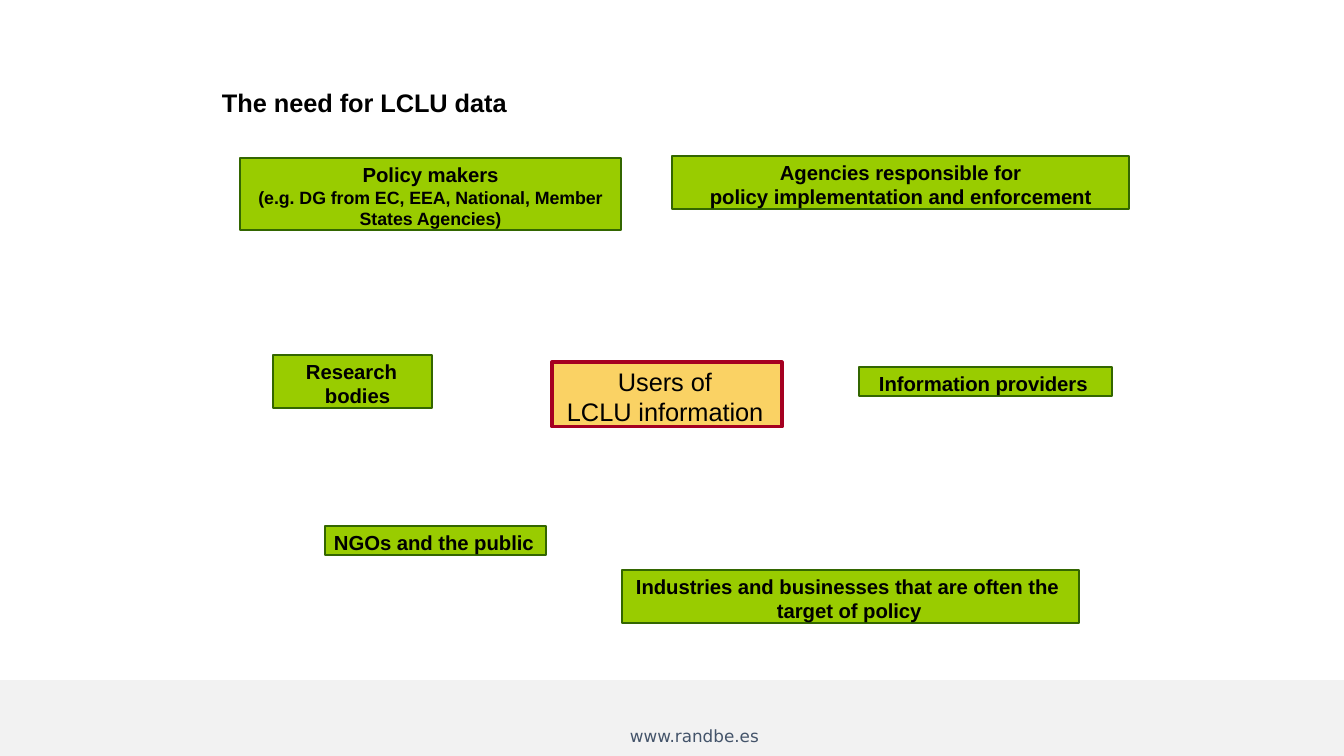
from dataclasses import dataclass

from pptx import Presentation
from pptx.dml.color import RGBColor as RGB
from pptx.enum.shapes import MSO_SHAPE as SHAPE
from pptx.enum.text import MSO_ANCHOR as ANCHOR, PP_ALIGN as ALIGN
from pptx.util import Emu, Pt

EMU_PER_PX = 12192000 / 1344


@dataclass(frozen=True)
class Theme:
    """Colours, fonts and type sizes of the slide."""
    font: str = "Arial"
    footer_font: str = "DejaVu Sans"
    text: str = "000000"
    footer_text: str = "44546A"
    band: str = "F2F2F2"
    user_fill: str = "99CC00"
    user_line: str = "336600"
    hub_fill: str = "FAD264"
    hub_line: str = "A50021"
    large: float = 18.1
    label: float = 14.5
    detail: float = 12.7
    footer: float = 12


T = Theme()


def px(n):
    """Turn pixels into EMU."""
    return Emu(round(n * EMU_PER_PX))


def add_text(tf, text, new=False, size=T.label, bold=True, font=T.font, color=T.text,
             align=ALIGN.LEFT, before=0, leading=None, left=0, first=0, tight=-5):
    """Write one formatted paragraph into a text frame."""
    p = tf.add_paragraph() if new else tf.paragraphs[0]
    p.alignment = align
    p.space_before = Pt(before)
    if leading:
        p.line_spacing = Pt(leading)
    pPr = p._p.get_or_add_pPr()
    pPr.set("marL", str(px(left)))
    pPr.set("indent", str(px(first)))
    for i, line in enumerate(text.split("\n")):
        if i:
            p.add_line_break()
        r = p.add_run()
        r.text = line
        r.font.size, r.font.bold, r.font.name = Pt(size), bold, font
        r.font.color.rgb = RGB.from_string(color)
        r._r.get_or_add_rPr().set("spc", str(tight))


def set_frame(tf, anchor=ANCHOR.TOP, side=0, top=0):
    """Set wrapping, anchor and insets of a text frame and return it."""
    tf.word_wrap = True
    tf.vertical_anchor = anchor
    tf.margin_left = tf.margin_right = px(side)
    tf.margin_top, tf.margin_bottom = px(top), 0
    return tf


def add_box(slide, at, fill=T.user_fill, line=T.user_line, weight=1.5):
    """Draw an outlined rectangle and return its text frame."""
    sp = slide.shapes.add_shape(SHAPE.RECTANGLE, *map(px, at))
    sp.shadow.inherit = False
    sp.fill.solid()
    sp.fill.fore_color.rgb = RGB.from_string(fill)
    sp.line.color.rgb = RGB.from_string(line)
    sp.line.width = Pt(weight)
    return set_frame(sp.text_frame, top=4)


def add_label(slide, at, **frame):
    """Add a text box and return its text frame."""
    return set_frame(slide.shapes.add_textbox(*map(px, at)).text_frame, **frame)


def main():
    """Build the slide and save it."""
    prs = Presentation()
    prs.slide_width, prs.slide_height = px(1344), px(756)
    slide = prs.slides.add_slide(prs.slide_layouts[6])

    add_box(slide, (0, 681, 1344, 75), T.band, T.band, 1)
    add_text(add_label(slide, (620, 721, 173, 30), anchor=ANCHOR.MIDDLE, side=10),
             "www.randbe.es", size=T.footer, bold=False, font=T.footer_font,
             color=T.footer_text, tight=0)

    hub = add_box(slide, (552, 362, 230, 65), T.hub_fill, T.hub_line, 2.25)
    add_text(hub, "Users of\nLCLU information", size=T.large, bold=False, left=15, first=51)

    policy = add_box(slide, (240, 158, 381, 72))
    add_text(policy, "Policy makers", align=ALIGN.CENTER, leading=17.4)
    add_text(policy, "(e.g. DG from EC, EEA, National, Member\nStates Agencies)", new=True,
             size=T.detail, align=ALIGN.CENTER, leading=15.2, before=0.5)

    agencies = add_box(slide, (672, 156, 457, 53))
    add_text(agencies, "Agencies responsible for", align=ALIGN.CENTER)
    add_text(agencies, "policy implementation and enforcement", new=True,
             align=ALIGN.CENTER, before=0.1)

    for at, text, left, first in (
        ((273, 355, 159, 53), "Research\nbodies", 52, -19),
        ((622, 570, 457, 53),
         "Industries and businesses that are often the\ntarget of policy", 155, -141),
        ((325, 526, 221, 29), "NGOs and the public", 9, 0),
        ((859, 367, 253, 29), "Information providers", 20, 0),
    ):
        add_text(add_box(slide, at), text, left=left, first=first)

    add_text(add_label(slide, (221, 87, 1052, 31), anchor=ANCHOR.MIDDLE),
             "The need for LCLU data", size=T.large, left=1)
    prs.save("out.pptx")


if __name__ == "__main__":
    main()
